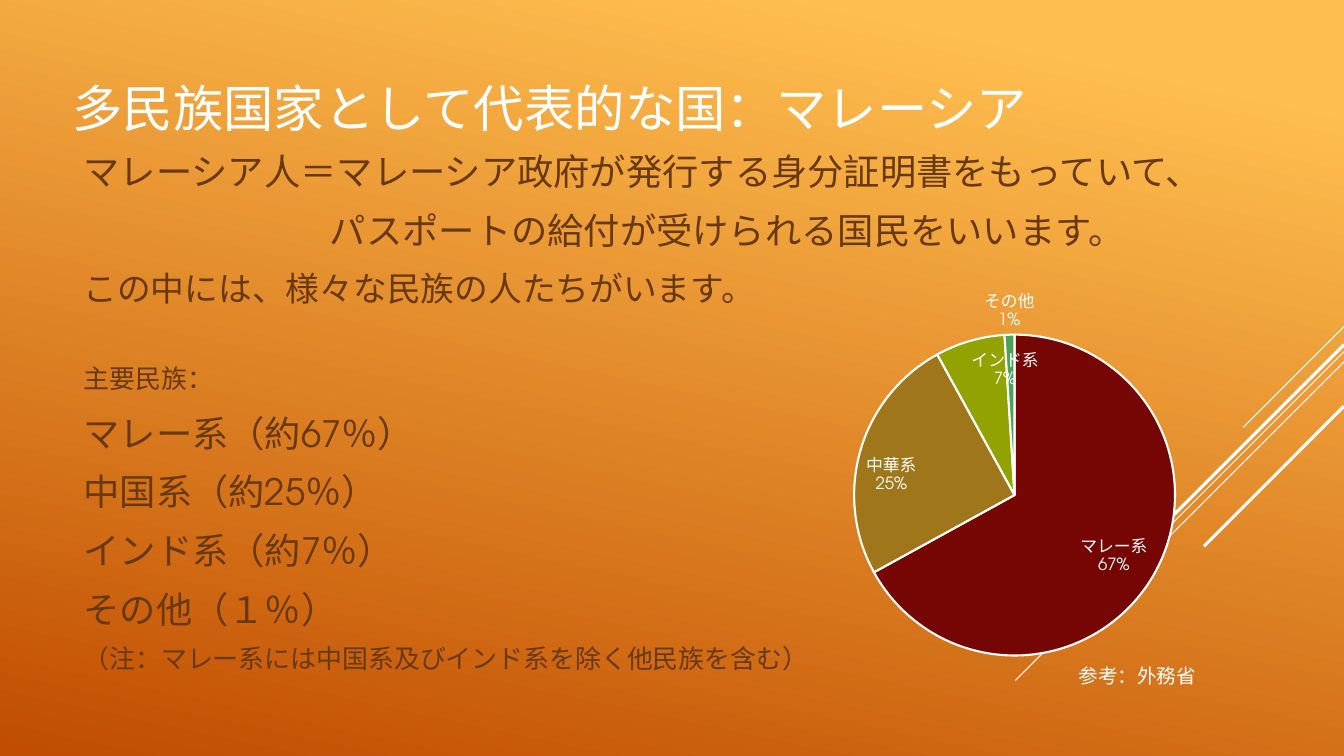
from lxml import etree
from pptx import Presentation
from pptx.chart.data import CategoryChartData
from pptx.dml.color import RGBColor
from pptx.enum.chart import XL_CHART_TYPE, XL_LABEL_POSITION
from pptx.enum.shapes import MSO_CONNECTOR
from pptx.enum.text import MSO_ANCHOR
from pptx.oxml import parse_xml
from pptx.oxml.ns import nsdecls, qn
from pptx.util import Pt

STRAIGHT = MSO_CONNECTOR.STRAIGHT
PIE = XL_CHART_TYPE.PIE
INSIDE_END = XL_LABEL_POSITION.INSIDE_END
OUTSIDE_END = XL_LABEL_POSITION.OUTSIDE_END
TOP, MIDDLE = MSO_ANCHOR.TOP, MSO_ANCHOR.MIDDLE

WHITE = RGBColor(0xFF, 0xFF, 0xFF)
BROWN = RGBColor(0x68, 0x38, 0x0F)
LIGHT_ORANGE = RGBColor(0xFF, 0xBF, 0x50)
DARK_ORANGE = RGBColor(0xC0, 0x4D, 0x00)
JAPANESE = "Noto Sans CJK JP"
LATIN = "TeX Gyre Adventor"

SLIDE_W, SLIDE_H = 960, 540
LINE_HEIGHT = 30

# Diagonal rays from the right edge: start height, length across, width
RAYS = [
    (233.3, 72, 0.75),
    (251.3, 234.7, 0.75),
    (258.5, 149, 0.75),
    (246.2, 137.5, 2.25),
    (290.2, 100, 2.25),
]

# Text, size, font, space before, left indent
EXPLANATION = [
    ("マレーシア人＝マレーシア政府が発行する身分証明書をもっていて、", 25.9, JAPANESE, 0, 0),
    ("パスポートの給付が受けられる国民をいいます。", 25.9, JAPANESE, 12, 176),
    ("この中には、様々な民族の人たちがいます。", 24.1, JAPANESE, 11, 0),
    ("主要民族：", 18.5, LATIN, 31, 0),
    ("マレー系（約67％）", 25.9, LATIN, 13, 0),
    ("中国系（約25％）", 25.9, LATIN, 12, 0),
    ("インド系（約7％）", 25.9, LATIN, 12, 0),
    ("その他（１％）", 25.9, LATIN, 12, 0),
    ("（注：マレー系には中国系及びインド系を除く他民族を含む）", 18.5, LATIN, 1, 0),
]

# Ethnic group, share in percent, slice colour
GROUPS = [
    ("マレー系", 67, RGBColor(0x76, 0x06, 0x03)),
    ("中華系", 25, RGBColor(0x9F, 0x76, 0x1A)),
    ("インド系", 7, RGBColor(0x92, 0xA2, 0x00)),
    ("その他", 1, RGBColor(0x4A, 0xA1, 0x57)),
]


def paint_background(slide):
    fill = slide.background.fill
    fill.gradient()
    fill.gradient_angle = 258
    stops = zip(fill.gradient_stops, (LIGHT_ORANGE, DARK_ORANGE), (0.1, 1))
    for stop, color, position in stops:
        stop.color.rgb = color
        stop.position = position


def add_ray(slide, start_y, reach, width):
    ray = slide.shapes.add_connector(
        STRAIGHT, Pt(SLIDE_W), Pt(start_y), Pt(SLIDE_W - reach), Pt(start_y + reach))
    ray.line.color.rgb = WHITE
    ray.line.width = Pt(width)
    etree.SubElement(ray._element.spPr, qn("a:effectLst"))


def add_text_frame(slide, left, top, width, height, anchor):
    box = slide.shapes.add_textbox(Pt(left), Pt(top), Pt(width), Pt(height))
    frame = box.text_frame
    frame.word_wrap = True
    frame.vertical_anchor = anchor
    return frame


def write_paragraph(paragraph, text, size, font_name, color):
    paragraph.text = text
    font = paragraph.font
    font.size = Pt(size)
    font.name = font_name
    font.color.rgb = color
    # East Asian typeface
    properties = paragraph._p.get_or_add_pPr()
    east_asian = etree.SubElement(properties.find(qn("a:defRPr")), qn("a:ea"))
    east_asian.set("typeface", JAPANESE)


def add_explanation(slide):
    frame = add_text_frame(slide, 52.6, 104, 895.7, 389, TOP)
    for i, (text, size, font_name, space, indent) in enumerate(EXPLANATION):
        paragraph = frame.add_paragraph() if i else frame.paragraphs[0]
        write_paragraph(paragraph, text, size, font_name, BROWN)
        paragraph.line_spacing = Pt(LINE_HEIGHT)
        paragraph.space_before = Pt(space)
        paragraph._p.get_or_add_pPr().set("marL", str(Pt(indent)))


def style_label_font(font):
    font.size = Pt(12)
    font.name = LATIN
    font.color.rgb = WHITE


def show_name_and_percent(labels_xml):
    shown = {"c:showVal": "0", "c:showCatName": "1", "c:showPercent": "1"}
    for tag, value in shown.items():
        for flag in labels_xml.iter(qn(tag)):
            flag.set("val", value)
    for flag in list(labels_xml.iter(qn("c:showBubbleSize"))):
        separator = etree.Element(qn("c:separator"))
        separator.text = "\n"
        flag.addnext(separator)


def add_ethnic_pie(slide):
    data = CategoryChartData()
    data.categories = [name for name, _, _ in GROUPS]
    data.add_series("Series 1", [share for _, share, _ in GROUPS])
    chart = slide.shapes.add_chart(
        PIE, Pt(534.2), Pt(196.6), Pt(377.3), Pt(283), data).chart
    chart.has_legend = False
    chart.has_title = False
    chart.font.size = Pt(10)
    chart.font.name = LATIN
    chart.font.color.rgb = WHITE
    plot = chart.plots[0]
    plot.vary_by_categories = True
    series = plot.series[0]

    # Slices
    for i, (_, _, color) in enumerate(GROUPS):
        slice_format = series.points[i].format
        slice_format.fill.solid()
        slice_format.fill.fore_color.rgb = color
        slice_format.line.color.rgb = WHITE
        slice_format.line.width = Pt(1.5)

    # Labels: the smallest slice has its label outside
    labels = series.data_labels
    labels.show_percentage = True
    labels.show_category_name = True
    labels.show_value = False
    labels.number_format = "0%"
    labels.number_format_is_linked = False
    labels.position = INSIDE_END
    style_label_font(labels.font)
    other_label = series.points[len(GROUPS) - 1].data_label
    style_label_font(other_label.font)
    other_label.position = OUTSIDE_END
    show_name_and_percent(labels._element)

    # Place of the pie within the chart
    plot_area = chart._chartSpace.chart.plotArea
    for layout in plot_area.findall(qn("c:layout")):
        plot_area.remove(layout)
    plot_area.insert(0, parse_xml(
        f'<c:layout {nsdecls("c")}><c:manualLayout>'
        '<c:layoutTarget val="inner"/><c:xMode val="edge"/><c:yMode val="edge"/>'
        '<c:x val="0.2"/><c:y val="0.15"/><c:w val="0.61"/><c:h val="0.81"/>'
        '</c:manualLayout></c:layout>'))


def main():
    presentation = Presentation()
    presentation.slide_width = Pt(SLIDE_W)
    presentation.slide_height = Pt(SLIDE_H)
    slide = presentation.slides.add_slide(presentation.slide_layouts[6])

    paint_background(slide)
    for ray in RAYS:
        add_ray(slide, *ray)

    # Title
    title = add_text_frame(slide, 44.6, 17.3, 723.6, 118.8, MIDDLE)
    write_paragraph(title.paragraphs[0], "多民族国家として代表的な国：マレーシア", 36, JAPANESE, WHITE)

    add_explanation(slide)
    add_ethnic_pie(slide)

    # Reference
    reference = add_text_frame(slide, 763.2, 470.9, 143.3, 24.5, TOP)
    write_paragraph(reference.paragraphs[0], "参考：外務省", 14, LATIN, WHITE)

    presentation.save("out.pptx")


if __name__ == "__main__":
    main()
